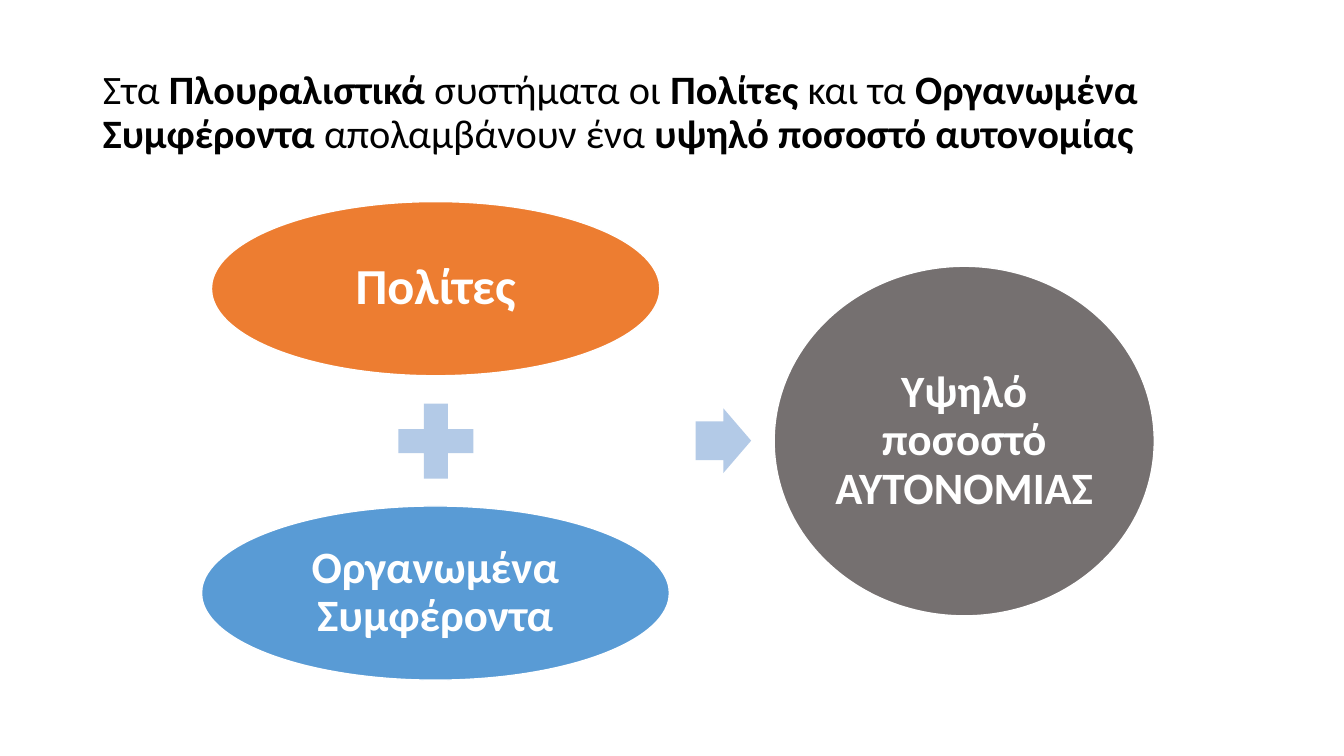
from pptx import Presentation
from pptx.dml.color import RGBColor
from pptx.enum.shapes import MSO_SHAPE
from pptx.enum.text import MSO_ANCHOR, PP_ALIGN
from pptx.util import Cm, Pt

OVAL = MSO_SHAPE.OVAL
PLUS = MSO_SHAPE.MATH_PLUS
ARROW = MSO_SHAPE.RIGHT_ARROW
MIDDLE = MSO_ANCHOR.MIDDLE
CENTER = PP_ALIGN.CENTER

FONT = "Calibri"
COLORS = {
    "black": "000000",
    "white": "FFFFFF",
    "orange": "ED7D31",
    "blue": "599BD5",
    "gray": "757070",
    "pale": "B3CAE7",
}

# Title pieces: text and whether it is bold
TITLE = [
    ("Στα ", False),
    ("Πλουραλιστικά ", True),
    ("συστήματα οι ", False),
    ("Πολίτες ", True),
    ("και τα ", False),
    ("Οργανωμένα Συμφέροντα", True),
    (" απολαμβάνουν ένα ", False),
    ("υψηλό ποσοστό αυτονομίας", True),
]


def color(name):
    return RGBColor.from_string(COLORS[name])


def style(run, size, tint, bold):
    font = run.font
    font.name = FONT
    font.size = Pt(size)
    font.bold = bold
    font.color.rgb = color(tint)


def add_title(slide):
    title = slide.shapes.title
    title.left, title.top = Cm(2.34), Cm(1.02)
    title.width, title.height = Cm(29.21), Cm(3.68)
    frame = title.text_frame
    frame.word_wrap = True
    frame.vertical_anchor = MIDDLE
    para = frame.paragraphs[0]
    para.alignment = PP_ALIGN.LEFT
    para.line_spacing = 0.9
    for text, bold in TITLE:
        run = para.add_run()
        run.text = text
        style(run, 28.8, "black", bold)


def add_shape(slide, kind, box, fill):
    shape = slide.shapes.add_shape(kind, *(Cm(n) for n in box))
    shape.shadow.inherit = False
    shape.fill.solid()
    shape.fill.fore_color.rgb = color(fill)
    shape.line.fill.background()
    return shape


def add_oval(slide, box, fill, text, size):
    oval = add_shape(slide, OVAL, box, fill)
    oval.line.color.rgb = color("white")
    oval.line.width = Pt(1)
    frame = oval.text_frame
    frame.margin_left = frame.margin_right = Cm(0.1)
    frame.margin_top = frame.margin_bottom = Cm(0.1)
    frame.word_wrap = True
    frame.vertical_anchor = MIDDLE
    frame.text = text
    para = frame.paragraphs[0]
    para.alignment = CENTER
    para.line_spacing = 0.9
    style(para.runs[0], size, "white", True)


def add_sign(slide, kind, box, ratios):
    sign = add_shape(slide, kind, box, "pale")
    for i, ratio in enumerate(ratios):
        sign.adjustments[i] = ratio


def main():
    deck = Presentation()
    deck.slide_width, deck.slide_height = Cm(33.87), Cm(19.05)
    slide = deck.slides.add_slide(deck.slide_layouts[5])
    add_title(slide)

    # The two sources, joined by a plus
    add_oval(slide, (5.33, 5.08, 11.3, 4.39), "orange", "Πολίτες", 36)
    add_sign(slide, PLUS, (9.7, 9.83, 2.57, 2.57), [0.235])
    add_oval(slide, (5.08, 12.75, 11.79, 4.39), "blue",
             "Οργανωμένα Συμφέροντα", 32)

    # The result
    add_sign(slide, ARROW, (17.53, 10.29, 1.4, 1.63), [0.6, 0.5])
    add_oval(slide, (19.51, 6.71, 9.58, 8.81), "gray",
             "Υψηλό ποσοστό ΑΥΤΟΝΟΜΙΑΣ", 32)

    deck.save("out.pptx")


if __name__ == "__main__":
    main()
